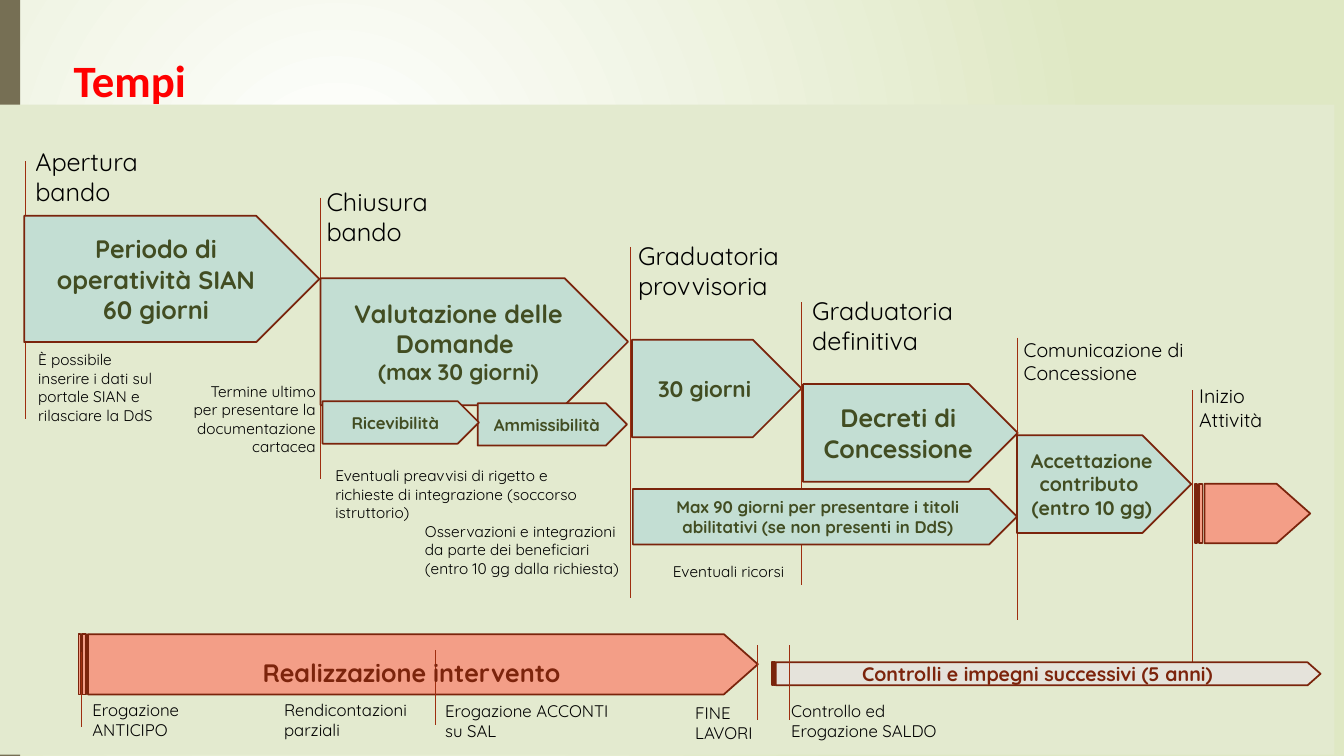
from lxml import etree
from pptx import Presentation, util as u
from pptx.dml.color import RGBColor
from pptx.enum import shapes, text
from pptx.oxml.ns import qn

FONT = "Quicksand"
RED, GREEN, SALMON = "7A240C", "C3DED3", "F39E87"
PLATE = shapes.MSO_SHAPE.PENTAGON
STRIPE = shapes.MSO_SHAPE.STRIPED_RIGHT_ARROW
LEFT, MID, RIGHT = text.PP_ALIGN.LEFT, text.PP_ALIGN.CENTER, text.PP_ALIGN.RIGHT


def hue(code):
    """Turn a hex string into a colour."""
    return RGBColor.from_string(code)


def cms(*nums):
    """Turn numbers into centimetre lengths."""
    return [u.Cm(n) for n in nums]


def write(frame, words, sizes, ink, align=LEFT, bold=False, font=FONT):
    """Fill a text frame, one paragraph per line, with one size or a size per line."""
    frame.word_wrap = True
    frame.text = words
    for i, para in enumerate(frame.paragraphs):
        para.alignment = align
        face = para.font
        face.name, face.bold, face.color.rgb = font, bold, hue(ink)
        face.size = u.Pt(sizes[min(i, len(sizes) - 1)])


def label(sl, x, y, w, h, words, size, ink="000000", align=LEFT, bold=False):
    """Place a text box."""
    box = sl.shapes.add_textbox(*cms(x, y, w, h))
    write(box.text_frame, words, [size], ink, align, bold)


def block(sl, kind, box, fill, edge=None):
    """Place a filled shape, outlined if an edge colour is given."""
    shape = sl.shapes.add_shape(kind, *cms(*box))
    shape.shadow.inherit = False
    shape.fill.solid()
    shape.fill.fore_color.rgb = hue(fill)
    if edge:
        shape.line.color.rgb = hue(edge)
        shape.line.width = u.Pt(1.25)
    else:
        shape.line.fill.background()
    return shape


def plate(sl, box, words, *sizes):
    """Place a green arrow plate with bold text."""
    shape = block(sl, PLATE, box, GREEN, RED)
    shape.text_frame.vertical_anchor = text.MSO_ANCHOR.MIDDLE
    write(shape.text_frame, words, sizes, "424D22", MID, True)


def stripe(sl, box, fill):
    """Place a full-height striped arrow."""
    shape = block(sl, STRIPE, box, fill, RED)
    shape.adjustments[0], shape.adjustments[1] = 1, 0.565


def mark(sl, x, y, h):
    """Draw a thin upright date line."""
    line = sl.shapes.add_connector(shapes.MSO_CONNECTOR.STRAIGHT, *cms(x, y, x, y + h))
    line.line.color.rgb = hue("9E2E0F")
    line.line.width = u.Pt(0.75)
    etree.SubElement(line._element.spPr, qn("a:effectLst"))


def ground(sl):
    """Paint the radial background."""
    fill = sl.background.fill
    fill.gradient()
    for stop, code, pos in zip(fill.gradient_stops, ("FFFFFF", "DFE8C4"), (0, 1)):
        stop.color.rgb, stop.position = hue(code), pos
    grad = sl._element.find(".//" + qn("a:gradFill"))
    grad.remove(grad.find(qn("a:lin")))
    way = etree.SubElement(grad, qn("a:path"), path="circle")
    etree.SubElement(way, qn("a:fillToRect"), l="50000", t="50000", r="100000", b="100000")


def frame(sl):
    """Place the side bar, the panel and the title."""
    block(sl, shapes.MSO_SHAPE.RECTANGLE, (0, 0, 0.51, 19.05), "766F54")
    block(sl, shapes.MSO_SHAPE.RECTANGLE, (-0.23, 2.64, 33.86, 16.38), "E3EACF")
    title = sl.shapes.title
    title.left, title.top, title.width, title.height = cms(1.6, 1.19, 32.26, 1.63)
    title.text_frame.vertical_anchor = text.MSO_ANCHOR.TOP
    write(title.text_frame, "Tempi", [32], "FF0000", LEFT, True, "Calibri")
    tree = sl.shapes._spTree
    tree.remove(title._element)
    tree.append(title._element)


def chain(sl, x, y):
    """Place the stepped phases: plate box, heading and date line by offset from it."""
    steps = [
        ((0, 0, 7.44, 3.18), "Periodo di operatività SIAN\n60 giorni", (18,),
         (0.03, -1.88, 3.48, 1.8), "Apertura bando", 18, (0.03, -1.38, 6.51)),
        ((7.47, 1.57, 7.75, 3.2), "Valutazione delle Domande \n(max 30 giorni)", (18, 16),
         (-0.1, -2.44, 3.48, 1.8), "Chiusura bando", 18, (0, -2.03, 7.09)),
        ((15.32, 3.12, 4.27, 2.46), "30 giorni", (16,),
         (-0.1, -2.64, 4.6, 1.8), "Graduatoria provvisoria", 18, (-0.03, -2.34, 8.84)),
        ((19.63, 4.24, 5.41, 2.46), "Decreti di Concessione", (18,),
         (-0.02, -2.36, 4.6, 1.8), "Graduatoria definitiva", 18, (-0.05, -2.06, 7.11)),
        ((25.02, 5.53, 4.39, 2.46), "Accettazione contributo \n(entro 10 gg)", (14,),
         (-0.08, -2.59, 4.6, 1.45), "Comunicazione di Concessione", 14, (0, -2.46, 7.11)),
        ((29.51, 6.75, 2.9, 1.5), "", (),
         (-0.15, -2.64, 3.25, 1.45), "Inizio\nAttività", 14, (-0.07, -2.36, 7.11)),
    ]
    for (px, py, w, h), words, sizes, (hx, hy, hw, hh), head, size, (mx, my, mh) in steps:
        px, py = x + px, y + py
        mark(sl, px + mx, py + my, mh)
        label(sl, px + hx, py + hy, hw, hh, head, size)
        if words:
            plate(sl, (px, py, w, h), words, *sizes)
        else:
            stripe(sl, (px, py, w, h), SALMON)
    for px, py, w, h, words in [
        (11.43, 4.72, 3.76, 1.07, "Ammissibilità"),
        (7.52, 4.67, 3.94, 1.07, "Ricevibilità"),
        (15.34, 6.88, 9.68, 1.4,
         "Max 90 giorni per presentare i titoli abilitativi (se non presenti in DdS)"),
    ]:
        plate(sl, (x + px, y + py, w, h), words, 12)


def notes(sl, x, y):
    """Place the small remarks under the phases."""
    for nx, ny, w, h, align, words in [
        (0.1, 3.27, 3.63, 2.13, LEFT,
         "È possibile inserire i dati sul portale SIAN e rilasciare la DdS"),
        (3.76, 4.06, 3.84, 2.13, RIGHT,
         "Termine ultimo per presentare la documentazione cartacea"),
        (7.59, 6.19, 8.05, 1.68, LEFT, "Eventuali preavvisi di rigetto e\n"
         "richieste di integrazione (soccorso istruttorio)"),
        (9.85, 7.59, 5.84, 1.68, LEFT, "Osservazioni e integrazioni da parte dei beneficiari\n"
         "(entro 10 gg dalla richiesta)"),
        (16.1, 8.61, 8.05, 0.74, LEFT, "Eventuali ricorsi"),
    ]:
        label(sl, x + nx, y + ny, w, h, words, 11, align=align)


def works(sl, x, y):
    """Place the two long arrows with their dates and captions."""
    stripe(sl, (x, y, 17.12, 1.52), SALMON)
    stripe(sl, (x + 17.48, y + 0.71, 13.82, 0.58), "E5E3DB")
    for mx, my in [(0.08, 0.45), (8.99, 0.4), (17.12, 0.28), (17.91, 0.28)]:
        mark(sl, x + mx, y + my, 1.88)
    for cx, cy, w, words in [
        (0.1, 1.52, 4.09, "Erogazione ANTICIPO"),
        (4.93, 1.52, 4.22, "Rendicontazioni parziali"),
        (8.99, 1.55, 4.83, "Erogazione ACCONTI su SAL"),
        (15.29, 1.6, 4.37, "FINE\nLAVORI"),
        (17.71, 1.55, 4.83, "Controllo ed Erogazione SALDO"),
    ]:
        label(sl, x + cx, y + cy, w, 1.27, words, 12)
    label(sl, x + 1.04, y + 0.45, 14.71, 1.02, "Realizzazione intervento",
          18, "7C240C", MID, True)
    label(sl, x + 17.91, y + 0.58, 12.52, 0.86, "Controlli e impegni successivi (5 anni)",
          14, "7C240C", MID, True)


def main():
    """Build and save the slide."""
    deck = Presentation()
    deck.slide_width, deck.slide_height = cms(33.87, 19.05)
    sl = deck.slides.add_slide(deck.slide_layouts[5])
    ground(sl)
    frame(sl)
    chain(sl, 0.61, 5.44)
    notes(sl, 0.61, 5.44)
    works(sl, 1.98, 15.98)
    deck.save("out.pptx")


if __name__ == "__main__":
    main()
